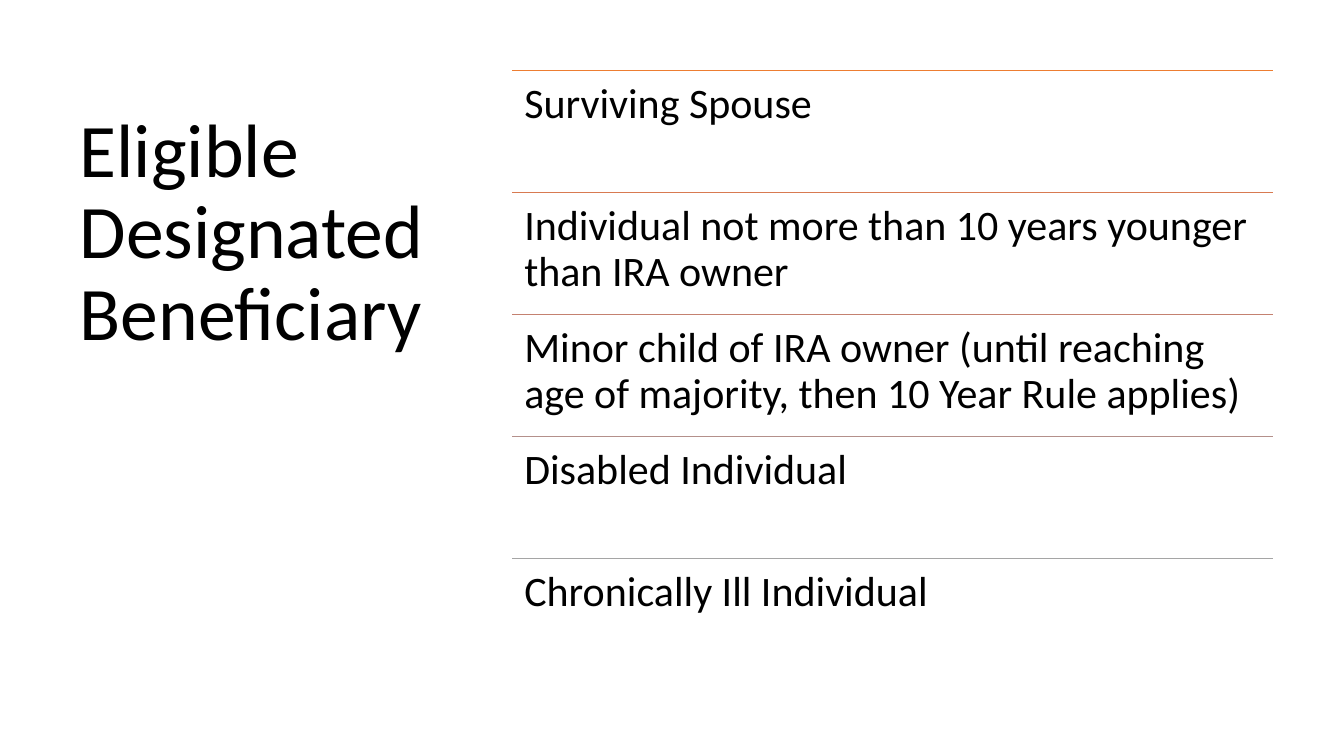
"""Build the slide listing the kinds of eligible designated beneficiary."""
from lxml.etree import SubElement
from pptx import Presentation
from pptx.dml.color import RGBColor
from pptx.enum.shapes import MSO_CONNECTOR
from pptx.enum.text import MSO_ANCHOR, MSO_AUTO_SIZE, PP_ALIGN
from pptx.oxml.ns import qn
from pptx.util import Inches, Pt

TITLE = "Eligible Designated Beneficiary"
BENEFICIARIES = [
    ("Surviving Spouse", RGBColor(0xED, 0x7D, 0x31)),
    ("Individual not more than 10 years younger than IRA owner", RGBColor(0xD8, 0x7A, 0x51)),
    ("Minor child of IRA owner (until reaching age of majority, then 10 Year Rule applies)",
     RGBColor(0xC4, 0x81, 0x70)),
    ("Disabled Individual", RGBColor(0xB4, 0x90, 0x8B)),
    ("Chronically Ill Individual", RGBColor(0xA5, 0xA5, 0xA5)),
]
BLACK = RGBColor(0, 0, 0)
FONT = "Calibri"
TOP = 0.7
LIST_LEFT, LIST_WIDTH, ROW_HEIGHT = 5.08, 7.55, 1.21
ROW_INSET = 0.12


def write_text(frame, text, size):
    frame.word_wrap = True
    frame.auto_size = MSO_AUTO_SIZE.NONE
    paragraph = frame.paragraphs[0]
    paragraph.alignment = PP_ALIGN.LEFT
    paragraph.line_spacing = 0.9
    run = paragraph.add_run()
    run.text = text
    run.font.name = FONT
    run.font.size = Pt(size)
    run.font.color.rgb = BLACK


def add_rule(slide, top, color):
    rule = slide.shapes.add_connector(
        MSO_CONNECTOR.STRAIGHT, Inches(LIST_LEFT), Inches(top),
        Inches(LIST_LEFT + LIST_WIDTH), Inches(top))
    rule.line.color.rgb = color
    rule.line.width = Pt(1)
    SubElement(rule.element.spPr, qn("a:effectLst"))


def add_row(slide, top, text):
    box = slide.shapes.add_textbox(
        Inches(LIST_LEFT), Inches(top), Inches(LIST_WIDTH), Inches(ROW_HEIGHT))
    frame = box.text_frame
    frame.margin_left = frame.margin_right = Inches(ROW_INSET)
    frame.margin_top = frame.margin_bottom = Inches(ROW_INSET)
    frame.vertical_anchor = MSO_ANCHOR.TOP
    write_text(frame, text, 30)


def main():
    presentation = Presentation()
    presentation.slide_width = Inches(13.33)
    presentation.slide_height = Inches(7.5)
    slide = presentation.slides.add_slide(presentation.slide_layouts[5])

    title = slide.shapes.title
    title.left, title.top = Inches(0.69), Inches(TOP)
    title.width, title.height = Inches(3.74), Inches(3.25)
    title.text_frame.vertical_anchor = MSO_ANCHOR.MIDDLE
    write_text(title.text_frame, TITLE, 54)

    for index, (text, color) in enumerate(BENEFICIARIES):
        row_top = TOP + index * ROW_HEIGHT
        add_rule(slide, row_top, color)
        add_row(slide, row_top, text)

    presentation.save("out.pptx")


if __name__ == "__main__":
    main()
